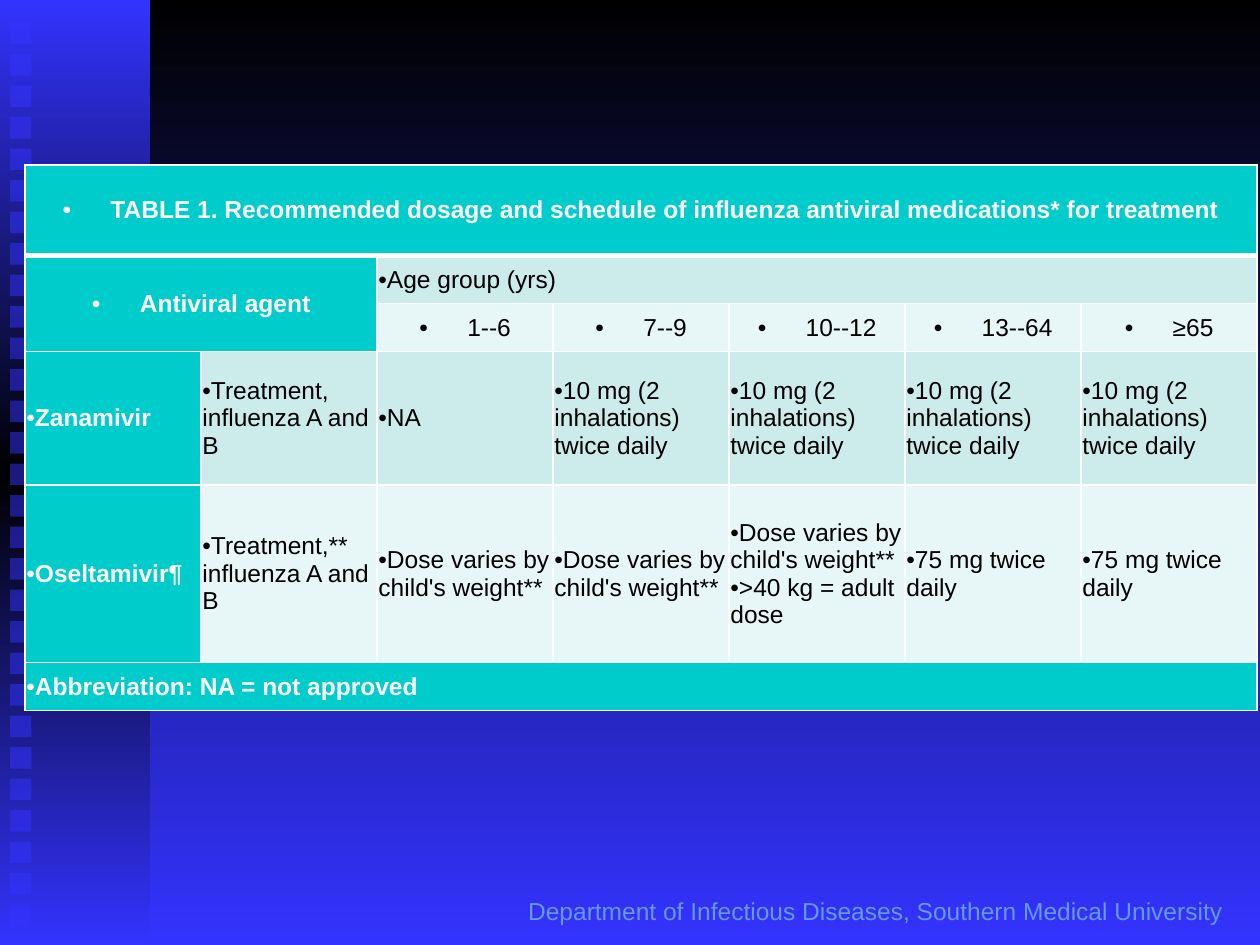
from copy import deepcopy

from lxml.etree import SubElement
from pptx import Presentation
from pptx.dml.color import RGBColor
from pptx.enum.shapes import MSO_SHAPE as Shape
from pptx.enum.text import MSO_ANCHOR as Anchor, PP_ALIGN as Align
from pptx.oxml.ns import qn
from pptx.util import Inches, Pt

BLACK, WHITE, BLUE, PALE_BLUE = "000000", "FFFFFF", "3333FF", "6699FF"
TEAL, LIGHT, LIGHTER = "00CCCC", "CCECEC", "E7F6F6"
FONT = "Arial"

ROW_HEIGHTS = [0.72, 0.38, 0.38, 1.06, 1.41, 0.38]
AGES = ["1--6", "7--9", "10--12", "13--64", "≥65"]
INHALED = "10 mg (2 inhalations) twice daily"
BY_WEIGHT = "Dose varies by child's weight**"
ADULT = "75 mg twice daily"
DOSES = {
    3: ["Zanamivir", "Treatment, influenza A and B", "NA"] + [INHALED] * 4,
    4: ["Oseltamivir¶", "Treatment,** influenza A and B", BY_WEIGHT, BY_WEIGHT,
        BY_WEIGHT + "\n>40 kg = adult dose", ADULT, ADULT],
}


def color(value):
    return RGBColor.from_string(value)


def write(frame, text, hue=BLACK, bold=False, align=Align.LEFT, bullet=None):
    """Put each line of text in its own paragraph."""
    frame.word_wrap = True
    for number, line in enumerate(text.split("\n")):
        para = frame.add_paragraph() if number else frame.paragraphs[0]
        para.alignment = align
        para.space_before = Pt(0)
        if bullet:
            hanging = Inches(0.38) if align == Align.CENTER else 0
            properties = para._p.get_or_add_pPr()
            properties.set("marL", str(hanging))
            properties.set("indent", str(-hanging))
            SubElement(properties, qn("a:buFont")).set("typeface", FONT)
            SubElement(properties, qn("a:buChar")).set("char", bullet)
        span = para.add_run()
        span.text = line
        font = span.font
        font.name, font.size, font.bold = FONT, Pt(14), bold
        font.color.rgb = color(hue)


def vertical_gradient(fill, element, hues):
    """Spread the colours evenly from top to bottom."""
    fill.gradient()
    fill.gradient_angle = 270
    stops = next(element.iter(qn("a:gsLst")))
    while len(stops) < len(hues):
        stops.append(deepcopy(stops[-1]))
    for number, (stop, hue) in enumerate(zip(fill.gradient_stops, hues)):
        stop.position = number / (len(hues) - 1)
        stop.color.rgb = color(hue)


def set_borders(cell, top=1, bottom=1):
    properties = cell._tc.get_or_add_tcPr()
    for side, width in zip("LRTB", (1, 1, top, bottom)):
        line = SubElement(properties, qn(f"a:ln{side}"), w=str(Pt(width)))
        paint = SubElement(line, qn("a:solidFill"))
        SubElement(paint, qn("a:srgbClr"), val=WHITE)


class DosageSlide:
    """Holds the table style and the current page."""

    margin = Inches(0.01)
    bullet = "•"

    def __init__(self, deck):
        self.page = deck.slides.add_slide(deck.slide_layouts[6])
        background = self.page.background
        vertical_gradient(background.fill, self.page._element, [BLACK, BLUE])

    def rectangle(self, left, top, width, height):
        box = self.page.shapes.add_shape(
            Shape.RECTANGLE, Inches(left), Inches(top), Inches(width), Inches(height))
        box.shadow.inherit = False
        box.line.fill.background()
        return box

    def band(self, *place):
        box = self.rectangle(*place)
        vertical_gradient(box.fill, box._element, [BLUE, BLACK, BLUE])

    def square(self, left, top, size):
        box = self.rectangle(left, top, size, size)
        box.fill.solid()
        box.fill.fore_color.rgb = color(BLUE)
        paint = next(box._element.spPr.iter(qn("a:srgbClr")))
        SubElement(paint, qn("a:alpha"), val="50000")

    def label(self, text, left, top, width, height, **style):
        box = self.page.shapes.add_textbox(
            Inches(left), Inches(top), Inches(width), Inches(height))
        write(box.text_frame, text, **style)

    def table(self, left, top, width, row_heights, columns):
        frame = self.page.shapes.add_table(
            len(row_heights), columns, Inches(left), Inches(top),
            Inches(width), Inches(sum(row_heights)))
        grid = frame.table
        for row, height in zip(grid.rows, row_heights):
            row.height = Inches(height)
        for row in range(len(row_heights)):
            for column in range(columns):
                set_borders(grid.cell(row, column),
                            top=3 if row == 1 else 1, bottom=3 if row == 0 else 1)
        return grid

    def cell(self, grid, row, column, text, fill, last=None, **style):
        """Fill one cell, merged up to the (row, column) given as last."""
        cell = grid.cell(row, column)
        if last:
            cell.merge(grid.cell(*last))
        cell.fill.solid()
        cell.fill.fore_color.rgb = color(fill)
        cell.vertical_anchor = Anchor.MIDDLE
        cell.margin_left = cell.margin_right = self.margin
        cell.margin_top = cell.margin_bottom = self.margin
        write(cell.text_frame, text, bullet=self.bullet, **style)


def main():
    deck = Presentation()
    deck.slide_width, deck.slide_height = Inches(10), Inches(7.5)
    slide = DosageSlide(deck)

    slide.band(0, 0, 1.19, 7.5)
    for number in range(29):
        slide.square(0.08, 0.18 + 0.25 * number, 0.17)
    slide.label("Department of Infectious Diseases, Southern Medical University",
                3.98, 7.06, 5.94, 0.36, hue=PALE_BLUE, align=Align.CENTER)

    heading = {"fill": TEAL, "hue": WHITE, "bold": True}
    grid = slide.table(0.2, 1.31, 9.78, ROW_HEIGHTS, 7)
    slide.cell(grid, 0, 0, "TABLE 1. Recommended dosage and schedule of influenza "
               "antiviral medications* for treatment",
               last=(0, 6), align=Align.CENTER, **heading)
    slide.cell(grid, 1, 0, "Antiviral agent", last=(2, 1), align=Align.CENTER, **heading)
    slide.cell(grid, 1, 2, "Age group (yrs)", LIGHT, last=(1, 6))
    for column, age in enumerate(AGES, start=2):
        slide.cell(grid, 2, column, age, LIGHTER, align=Align.CENTER)
    for row, (agent, *doses) in DOSES.items():
        slide.cell(grid, row, 0, agent, **heading)
        for column, dose in enumerate(doses, start=1):
            slide.cell(grid, row, column, dose, LIGHT if row % 2 else LIGHTER)
    slide.cell(grid, 5, 0, "Abbreviation: NA = not approved", last=(5, 6), **heading)

    deck.save("out.pptx")


if __name__ == "__main__":
    main()
